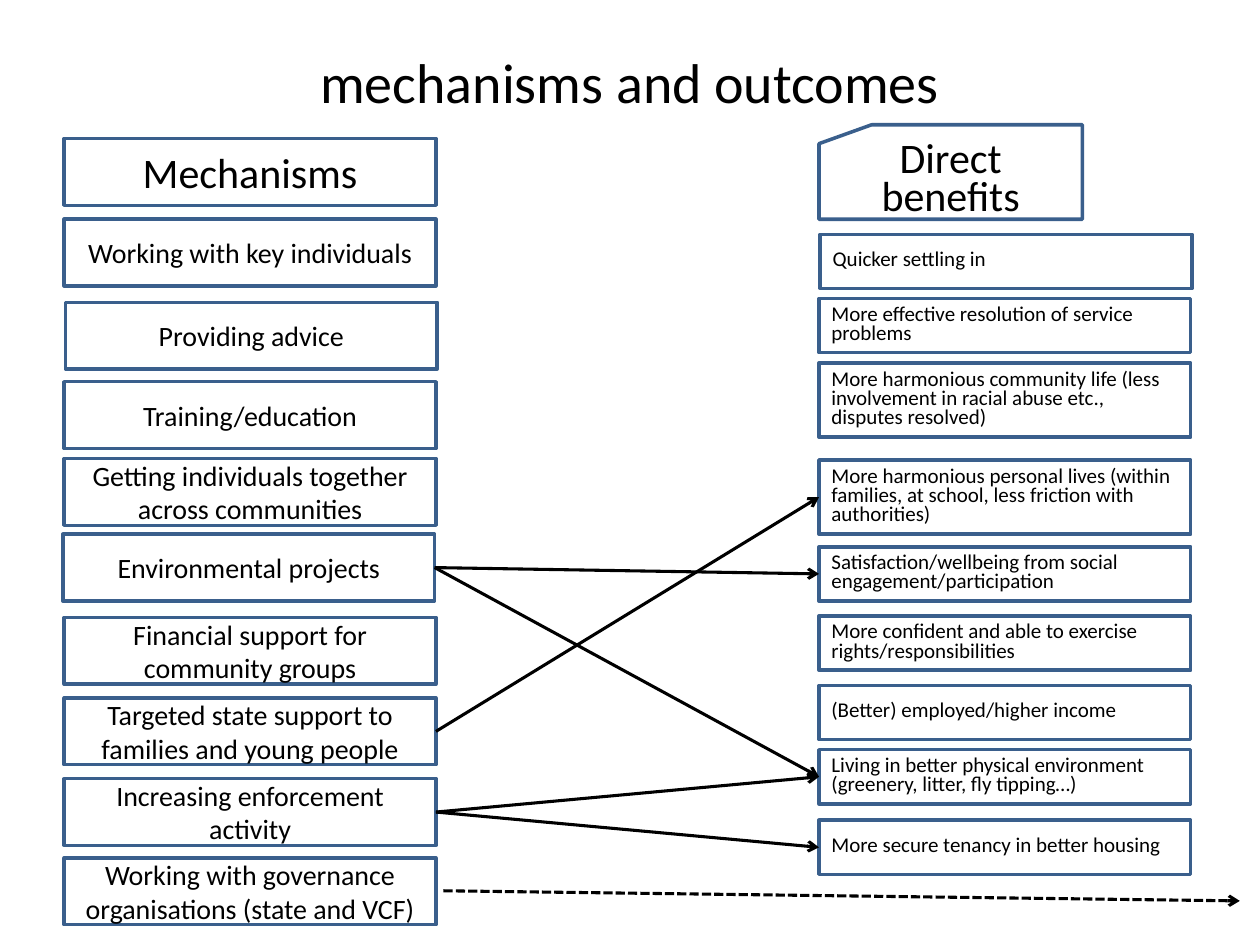
"""Builds the slide linking mechanisms to their direct benefits."""
from lxml import etree
from pptx import Presentation
from pptx.dml.color import RGBColor
from pptx.enum.dml import MSO_LINE
from pptx.enum.shapes import MSO_CONNECTOR, MSO_SHAPE
from pptx.enum.text import MSO_ANCHOR, PP_ALIGN
from pptx.oxml.ns import qn
from pptx.util import Pt

RECT, CARD = MSO_SHAPE.RECTANGLE, MSO_SHAPE.FLOWCHART_CARD
STRAIGHT, DASH = MSO_CONNECTOR.STRAIGHT, MSO_LINE.SQUARE_DOT
LEFT, CENTER, MIDDLE = PP_ALIGN.LEFT, PP_ALIGN.CENTER, MSO_ANCHOR.MIDDLE
PX = 9144
LEFT_SIDE, RIGHT_SIDE = 1, 3
THEME = {
    "font": "Calibri",
    "ink": RGBColor(0, 0, 0),
    "edge": RGBColor(0x3A, 0x5F, 0x8C),
    "title": Pt(32), "heading": Pt(24), "mechanism": Pt(16), "benefit": Pt(12),
    "box_line": Pt(2), "arrow_line": Pt(1.75),
}
BOX_W, MECHANISM_H = 295, 53

MECHANISMS = [
    (51, 174, "Working with key individuals"),
    (52, 240, "Providing advice"),
    (51, 303, "Training/education"),
    (51, 364, "Getting individuals together across communities"),
    (50, 424, "Environmental projects"),
    (51, 490, "Financial support for community groups"),
    (51, 554, "Targeted state support to families and young people"),
    (51, 618, "Increasing enforcement activity"),
    (51, 681, "Working with governance organisations (state and VCF)"),
]
BENEFITS = [
    (651, 186, 43, "Quicker settling in"),
    (650, 237, 43, "More effective resolution of service problems"),
    (650, 288, 59, "More harmonious community life (less involvement in racial abuse etc., disputes resolved)"),
    (650, 365, 59, "More harmonious personal lives (within families, at school, less friction with authorities)"),
    (650, 434, 43, "Satisfaction/wellbeing from social engagement/participation"),
    (650, 489, 43, "More confident and able to exercise rights/responsibilities"),
    (650, 544, 43, "(Better) employed/higher income"),
    (650, 595, 43, "Living in better physical environment (greenery, litter, fly tipping…)"),
    (650, 651, 43, "More secure tenancy in better housing"),
]
LINKS = [(4, 7), (4, 4), (6, 3), (7, 8), (7, 7)]


def write(sp, text, size, align=CENTER, spacing=None):
    tf = sp.text_frame
    tf.word_wrap = True
    tf.vertical_anchor = MIDDLE
    p = tf.paragraphs[0]
    for name, value in {"alignment": align, "line_spacing": spacing}.items():
        setattr(p, name, value)
    r = p.add_run()
    r.text = text
    for name, value in {"name": THEME["font"], "size": THEME[size]}.items():
        setattr(r.font, name, value)
    r.font.color.rgb = THEME["ink"]


def add_box(box, text, size, kind=RECT, **layout):
    sp = s.shapes.add_shape(kind, *(v * PX for v in box))
    sp.shadow.inherit = False
    sp.fill.background()
    sp.line.color.rgb = THEME["edge"]
    sp.line.width = THEME["box_line"]
    write(sp, text, size, **layout)
    return sp


prs = Presentation()
prs.slide_width, prs.slide_height = 1000 * PX, 750 * PX
s = prs.slides.add_slide(prs.slide_layouts[5])

title = s.shapes.title
for name, value in {"left": 50, "top": 30, "width": 900, "height": 69}.items():
    setattr(title, name, value * PX)
write(title, "mechanisms and outcomes", "title")

add_box((51, 110, BOX_W, MECHANISM_H), "Mechanisms", "heading")
add_box((650, 99, 209, 75), "Direct benefits", "heading", CARD, spacing=Pt(22))
mechanisms = [add_box((x, y, BOX_W, MECHANISM_H), text, "mechanism")
              for x, y, text in MECHANISMS]
benefits = [add_box((x, y, BOX_W, h), text, "benefit", align=LEFT, spacing=Pt(11))
            for x, y, h, text in BENEFITS]

arrows = []
for mechanism, benefit in LINKS:
    arrow = s.shapes.add_connector(STRAIGHT, 0, 0, 0, 0)
    arrow.begin_connect(mechanisms[mechanism], RIGHT_SIDE)
    arrow.end_connect(benefits[benefit], LEFT_SIDE)
    arrows.append(arrow)
onward = s.shapes.add_connector(STRAIGHT, 352 * PX, 707 * PX, 984 * PX, 715 * PX)
onward.line.dash_style = DASH
arrows.append(onward)

for arrow in arrows:
    arrow.line.color.rgb = THEME["ink"]
    arrow.line.width = THEME["arrow_line"]
    ln = arrow.element.spPr.find(qn("a:ln"))
    etree.SubElement(ln, qn("a:tailEnd"), type="arrow")
    etree.SubElement(arrow.element.spPr, qn("a:effectLst"))

prs.save("out.pptx")
